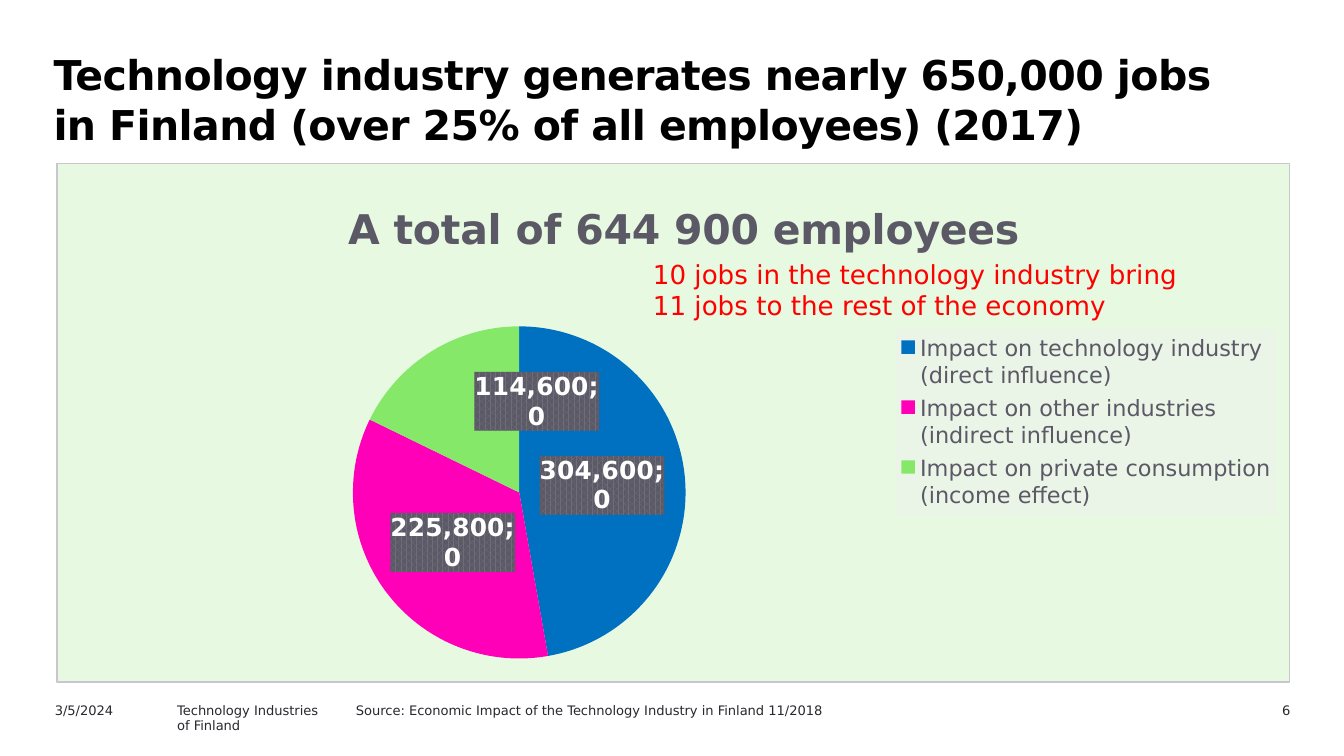
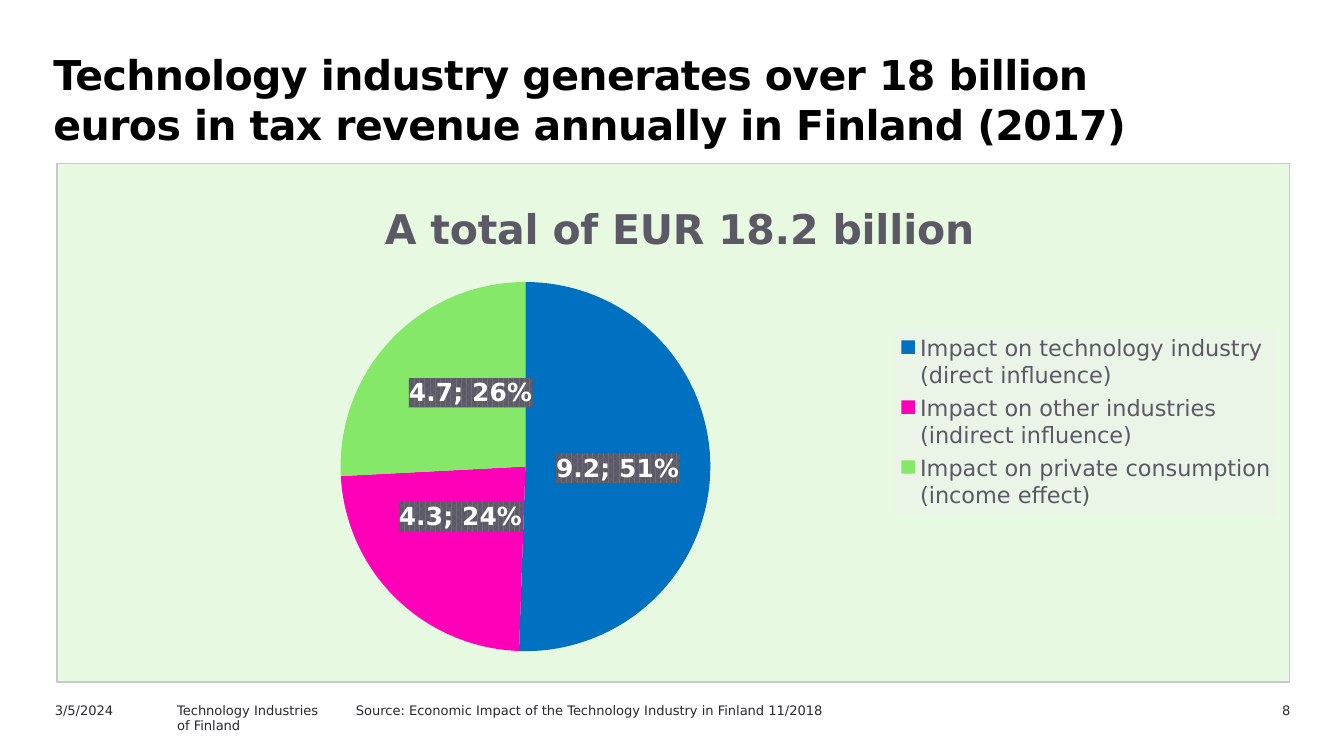
from copy import deepcopy

from pptx import Presentation
from pptx import util as u
from pptx.chart.data import CategoryChartData
from pptx.dml.color import RGBColor
from pptx.enum import chart as c
from pptx.enum import text as t
from pptx.oxml import parse_xml
from pptx.oxml.ns import nsdecls, qn

FONT = "DejaVu Sans"
BLACK, INK, GREY, WHITE, RED = "000000", "29282E", "5C5967", "FFFFFF", "FF0000"
PANEL, PANEL_EDGE, LEGEND_FILL, LABEL_FILL = "E7FAE1", "C8C6CE", "EBF5E7", "6E6C79"
SLICES = ["0070C0", "FF00B8", "85E869"]
IMPACTS = [
    "Impact on technology industry (direct influence)",
    "Impact on other industries (indirect influence)",
    "Impact on private consumption (income effect)",
]
LEGEND_BOX = dict(xMode="edge", yMode="edge", x=0.68, y=0.32, w=0.31, h=0.36)

# Boxes are left, top, width, height in percent of the slide
CHART_BOX = (4.2, 21.5, 91.8, 68.8)
FOOTERS = [
    ((3.1, 92, 10, 3.2), ["3/5/2024"]),
    ((12.2, 92, 18, 3.2), ["Technology Industries", "of Finland"]),
    ((25.5, 92, 48.8, 3.2),
     ["Source: Economic Impact of the Technology Industry in Finland 11/2018"]),
]
PAGE_BOX = (87.6, 92, 9.4, 3.2)
CALLOUT_BOX = (47.6, 33.25, 45, 10.1)

# Pie is the plot's left, top, width, height as shares of the chart;
# moved shifts single labels by index
SLIDES = [
    dict(
        title="Technology industry generates nearly 650,000 jobs "
              "in Finland (over 25% of all employees) (2017)",
        title_width=90.5, page="6", total="A total of 644 900 employees",
        total_left=0.23, values=[304600, 225800, 114600], number_format="#,##0",
        pie=(0.24, 0.31, 0.27, 0.65), moved={2: (0.05, -0.04)},
        callout=["10 jobs in the technology industry bring",
                 "11 jobs to the rest of the economy"],
    ),
    dict(
        title="Technology industry generates over 18 billion "
              "euros in tax revenue annually in Finland (2017)",
        title_width=87.4, page="8", total="A total of EUR 18.2 billion",
        total_left=0.26, values=[9.2, 4.3, 4.7], number_format="General",
        pie=(0.23, 0.22, 0.3, 0.73), moved={1: (0, -0.03), 2: (0.01, -0.02)},
        callout=[],
    ),
]


def style(font, size, color, bold=False):
    font.name, font.size, font.bold = FONT, u.Pt(size), bold
    font.color.rgb = RGBColor.from_string(color)


def chart_part(tag, inner):
    """Return a chart element, such as c:spPr, around the given XML."""
    return parse_xml(f'<c:{tag} {nsdecls("c", "a")}>{inner}</c:{tag}>')


presentation = Presentation()
presentation.slide_width = u.Inches(10)
presentation.slide_height = presentation.slide_width * 9 // 16
column, row = presentation.slide_width / 100, presentation.slide_height / 100
units = (column, row, column, row)

for content in SLIDES:
    slide = presentation.slides.add_slide(presentation.slide_layouts[6])

    # Pie chart on the green panel
    data = CategoryChartData(number_format=content["number_format"])
    data.categories = IMPACTS
    data.add_series("Series 1", content["values"])
    box = [int(share * unit) for share, unit in zip(CHART_BOX, units)]
    chart = slide.shapes.add_chart(c.XL_CHART_TYPE.PIE, *box, data).chart
    style(chart.font, 10, INK)
    chart.has_title = chart.has_legend = True
    total = chart.chart_title.text_frame.paragraphs[0]
    total.text = content["total"]
    style(total.font, 22, GREY, True)
    chart.legend.position = c.XL_LEGEND_POSITION.RIGHT
    chart.legend.include_in_layout = False
    style(chart.legend.font, 12, GREY)

    plot = chart.plots[0]
    plot.vary_by_categories = True
    series = plot.series[0]
    for index, color in enumerate(SLICES):
        fill = series.points[index].format.fill
        fill.solid()
        fill.fore_color.rgb = RGBColor.from_string(color)

    labels = series.data_labels
    labels.show_value = labels.show_percentage = True
    labels.number_format = content["number_format"]
    labels.number_format_is_linked = False
    labels.position = c.XL_LABEL_POSITION.CENTER
    style(labels.font, 13.3, WHITE, True)

    # Panel, legend and label backgrounds
    space = chart.element if hasattr(chart, "element") else chart._chartSpace
    space.find(qn("c:chart")).addnext(chart_part(
        "spPr", f'<a:solidFill><a:srgbClr val="{PANEL}"/></a:solidFill>'
        f'<a:ln w="9525"><a:solidFill><a:srgbClr val="{PANEL_EDGE}"/></a:solidFill></a:ln>'))
    corners = chart_part("roundedCorners", "")
    corners.set("val", "0")
    space.insert(0, corners)
    legend = chart.legend._element
    legend.find(qn("c:overlay")).addnext(chart_part(
        "spPr", f'<a:solidFill><a:srgbClr val="{LEGEND_FILL}"/></a:solidFill>'))
    label_list = labels._element
    label_list.find(qn("c:numFmt")).addnext(chart_part(
        "spPr", f'<a:pattFill prst="pct75"><a:fgClr><a:srgbClr val="{LABEL_FILL}"/></a:fgClr>'
        f'<a:bgClr><a:srgbClr val="{GREY}"/></a:bgClr></a:pattFill>'))
    label_list.find(qn("c:showBubbleSize")).addnext(chart_part("separator", "; "))

    # Single labels repeat the shared settings and add their own place
    shared = [part for part in label_list if part.tag != qn("c:showLeaderLines")]
    moved_labels = []
    for index, (x, y) in content["moved"].items():
        label = chart_part("dLbl", f'<c:idx val="{index}"/>')
        label.extend([deepcopy(part) for part in shared])
        moved_labels.append((label, label[0], dict(x=x, y=y)))
    for position, (label, _, _) in enumerate(moved_labels):
        label_list.insert(position, label)

    # Manual places: element, the child the layout follows, settings
    title = chart.chart_title._element
    plot_area = plot._element.getparent()
    places = moved_labels + [
        (title, title.find(qn("c:tx")),
         dict(xMode="edge", yMode="edge", x=content["total_left"], y=0.06)),
        (legend, legend.find(qn("c:legendPos")), LEGEND_BOX),
        (plot_area, None, dict(layoutTarget="inner", xMode="edge", yMode="edge",
                               **dict(zip("xywh", content["pie"])))),
    ]
    for element, before, settings in places:
        for old in element.findall(qn("c:layout")):
            element.remove(old)
        inner = "".join(f'<c:{key} val="{value}"/>' for key, value in settings.items())
        layout = chart_part("layout", f"<c:manualLayout>{inner}</c:manualLayout>")
        if before is None:
            element.insert(0, layout)
        else:
            before.addnext(layout)

    # Texts: box, lines, size, colour
    texts = [((2.8, 5.51, content["title_width"], 14.4), [content["title"]], 22, BLACK)]
    texts += [(place, lines, 7, INK) for place, lines in FOOTERS]
    texts.append((PAGE_BOX, [content["page"]], 7, INK))
    if content["callout"]:
        texts.append((CALLOUT_BOX, content["callout"], 14, RED))
    for place, lines, size, color in texts:
        box = [int(share * unit) for share, unit in zip(place, units)]
        frame = slide.shapes.add_textbox(*box).text_frame
        frame.word_wrap = place != CALLOUT_BOX
        frame.text = "\n".join(lines)
        for paragraph in frame.paragraphs:
            style(paragraph.font, size, color, size == 22)
            if place == PAGE_BOX:
                paragraph.alignment = t.PP_ALIGN.RIGHT
            if size == 22:
                paragraph.line_spacing = u.Pt(27)
                paragraph._p.get_or_add_pPr().set("marL", str(u.Inches(0.02)))
                paragraph.runs[0].font._element.set("spc", "-30")

presentation.save("out.pptx")
